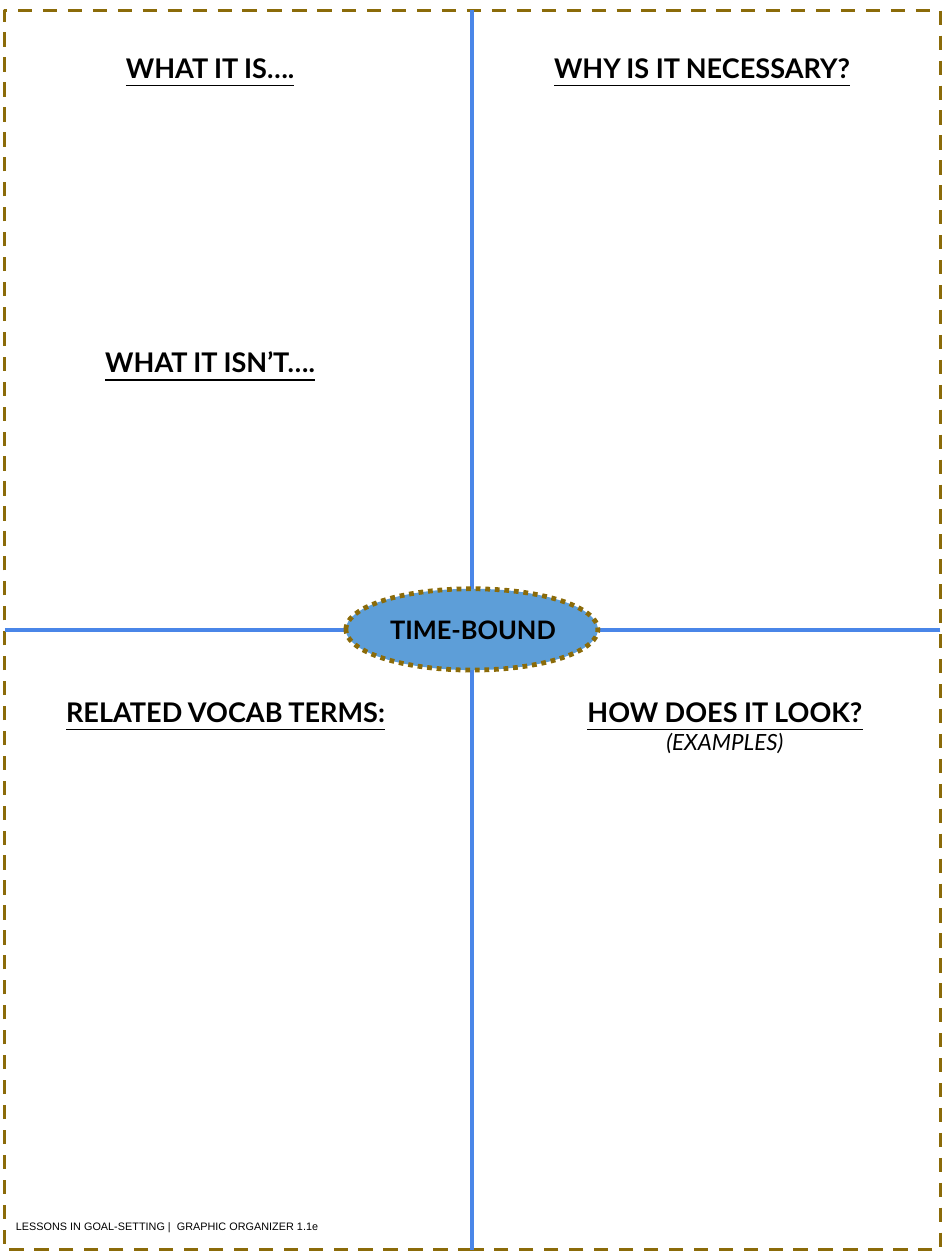
from pptx import Presentation
from pptx import util as u
from pptx.dml.color import RGBColor
from pptx.enum import dml, shapes, text
from pptx.oxml.ns import qn
from lxml import etree

BLACK = RGBColor(0x00, 0x00, 0x00)
GOLD = RGBColor(0x8B, 0x6B, 0x09)
BLUE = RGBColor(0x4A, 0x86, 0xE8)
SKY = RGBColor(0x5D, 0x9E, 0xD8)

deck = Presentation()
deck.slide_width = u.Inches(8.25)
deck.slide_height = u.Inches(11)
slide = deck.slides.add_slide(deck.slide_layouts[6])
left, top, right, base = 0.04, 0.09, 8.21, 10.91
mid_x, mid_y = 4.12, 5.5


def add_form(kind, box, width, dash):
    form = slide.shapes.add_shape(kind, *map(u.Inches, box))
    form.shadow.inherit = False
    form.fill.background()
    form.line.color.rgb = GOLD
    form.line.width = u.Pt(width)
    form.line.dash_style = dash
    return form


def add_text(words, box, size, face="Lato", bold=True, line=False,
             align=text.PP_ALIGN.CENTER):
    frame = slide.shapes.add_textbox(*map(u.Inches, box)).text_frame
    frame.word_wrap = True
    frame.auto_size = text.MSO_AUTO_SIZE.SHAPE_TO_FIT_TEXT
    frame.margin_left = frame.margin_right = u.Inches(0.1)
    frame.margin_top = frame.margin_bottom = u.Inches(0.1)
    para = frame.paragraphs[0]
    para.alignment = align
    para.add_run().text = words
    font = para.font
    font.name, font.size, font.bold = face, u.Pt(size), bold
    font.underline = line
    font.color.rgb = BLACK
    return para


# Dashed page border
add_form(shapes.MSO_SHAPE.RECTANGLE, (left, top, right - left, base - top),
         2.25, dml.MSO_LINE.DASH)

# Lines between the four quarters
for ends in [(right, mid_y, left, mid_y), (mid_x, top, mid_x, base)]:
    rule = slide.shapes.add_connector(shapes.MSO_CONNECTOR.STRAIGHT,
                                      *map(u.Inches, ends))
    rule.line.color.rgb = BLUE
    rule.line.width = u.Pt(2.25)
    etree.SubElement(rule._element.spPr, qn("a:effectLst"))

# Topic in the centre
oval = add_form(shapes.MSO_SHAPE.OVAL, (3.02, 5.14, 2.2, 0.71),
                3, dml.MSO_LINE.ROUND_DOT)
oval.fill.solid()
oval.fill.fore_color.rgb = SKY
add_text("TIME-BOUND", (3.23, 5.26, 1.8, 0.47), 16)

# Quarter headings
heads = [
    ("WHAT IT IS….", 0.48, 0.35, 2.71),
    ("WHAT IT ISN’T….", 0.48, 2.92, 2.71),
    ("WHY IS IT NECESSARY?", 4.49, 0.35, 3.28),
    ("RELATED VOCAB TERMS:", 0.13, 5.97, 3.68),
]
for words, x, y, width in heads:
    add_text(words, (x, y, width, 0.49), 17, line=True)

# Heading with a lighter note that wraps below it
para = add_text("HOW DOES IT LOOK? ", (4.73, 5.97, 3.2, 0.72), 17, line=True)
note = para.add_run()
note.text = "(EXAMPLES)"
note.font.size = u.Pt(14)
note.font.bold = note.font.underline = False
note.font.italic = True

# Footer
add_text("LESSONS IN GOAL-SETTING |  GRAPHIC ORGANIZER 1.1e",
         (left, 10.59, 3.36, 0.32), 6.8, "Arial", False,
         align=text.PP_ALIGN.LEFT)

deck.save("out.pptx")
